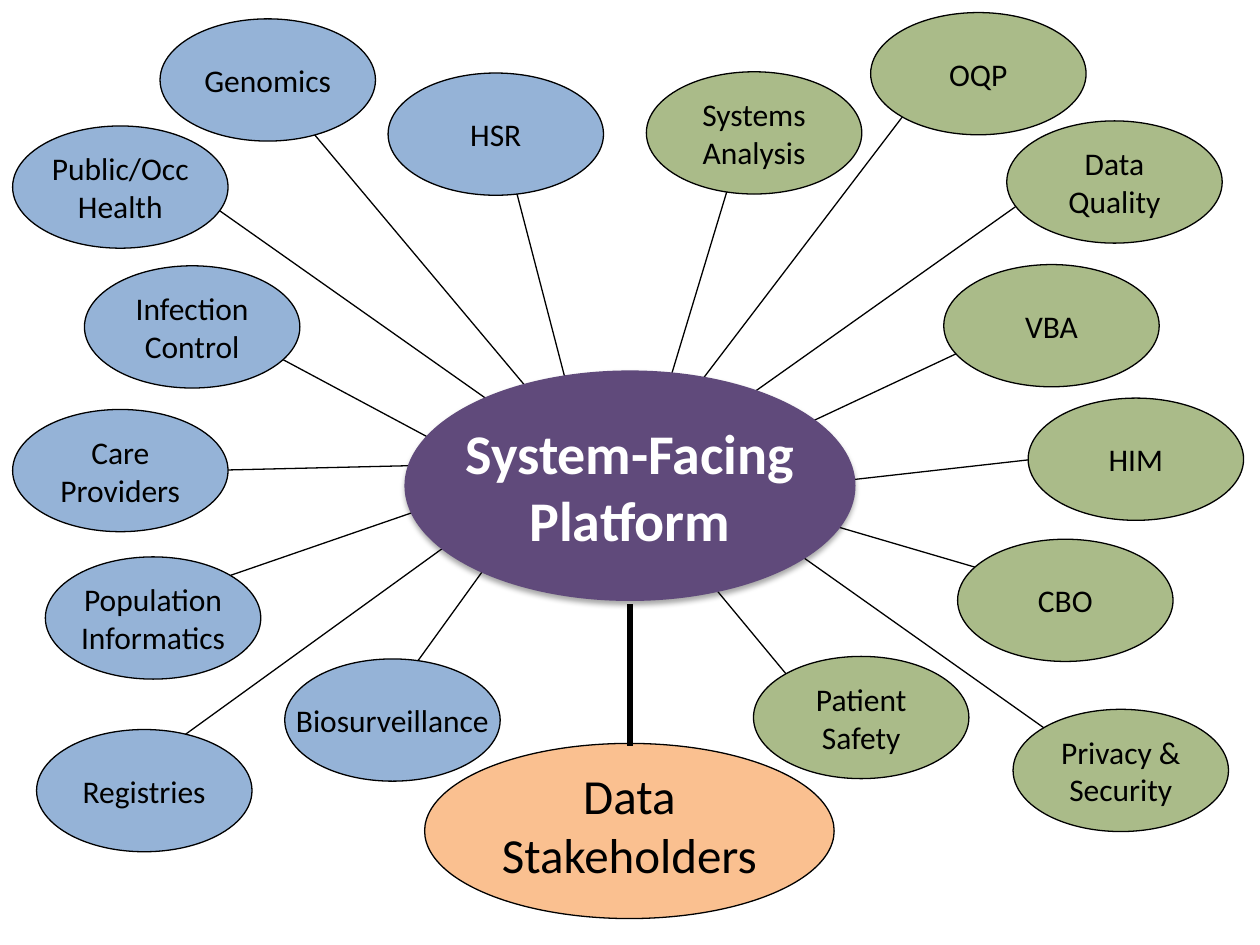
import lxml.etree
import pptx
import pptx.dml.color
import pptx.enum.shapes
import pptx.enum.text
import pptx.oxml.ns
import pptx.util

PX = 9144
BLACK, WHITE = "000000", "FFFFFF"
BLUE, GREEN, ORANGE, PURPLE = "95B3D7", "AABB89", "FAC090", "604A7B"
DEPARTMENT_SIZE = (171, 97)

CLINICAL_BOX = (10, 15)
CLINICAL = [
    ("Biosurveillance", (216, 508), (387, 419), (304, 534)),
    ("Registries", (19, 564), (372, 398), (119, 581)),
    ("Population Informatics", (26, 427), (398, 364), (172, 442)),
    ("Care Providers", (0, 310), (383, 353), (171, 358)),
    ("Infection Control", (57, 196), (412, 376), (197, 261)),
    ("Public/Occ Health", (0, 85), (398, 317), (147, 140)),
    ("Genomics", (117, 0), (415, 301), (228, 78)),
    ("HSR", (298, 43), (441, 295), (398, 130)),
]

BUSINESS_BOX = (513, 10)
BUSINESS = [
    ("Patient Safety", (85, 511), (43, 443), (111, 525)),
    ("Privacy &\vSecurity", (291, 553), (107, 420), (316, 568)),
    ("CBO", (247, 418), (107, 395), (291, 449)),
    ("HIM", (303, 306), (72, 381), (303, 355)),
    ("VBA", (236, 200), (126, 327), (286, 252)),
    ("Data Quality", (286, 86), (66, 315), (341, 120)),
    ("OQP", (178, 0), (21, 322), (203, 83)),
    ("Systems Analysis", (0, 47), (17, 297), (66, 135)),
]

PLATFORM_BOX = (321, 294)


def rgb(value):
    """Turn a hex string into a colour."""
    return pptx.dml.color.RGBColor.from_string(value)


def place(box, point):
    """Return the slide position in EMU of a point inside a box."""
    return [(origin + offset) * PX for origin, offset in zip(box, point)]


def add_spoke(slide, box, start, end, weight=0.75):
    """Draw a black line between two points of a box."""
    spoke = slide.shapes.add_connector(
        pptx.enum.shapes.MSO_CONNECTOR.STRAIGHT, *place(box, start), *place(box, end))
    spoke.line.color.rgb = rgb(BLACK)
    spoke.line.width = pptx.util.Pt(weight)
    lxml.etree.SubElement(spoke._element.spPr, pptx.oxml.ns.qn("a:effectLst"))


def add_bubble(slide, box, corner, size, label, fill, points=18, color=BLACK,
               bold=False, outlined=True, wrap=True, bottom=0):
    """Draw a labelled ellipse inside a box and return it."""
    bubble = slide.shapes.add_shape(
        pptx.enum.shapes.MSO_SHAPE.OVAL, *place(box, corner), *[side * PX for side in size])
    bubble.shadow.inherit = False
    bubble.fill.solid()
    bubble.fill.fore_color.rgb = rgb(fill)
    if outlined:
        bubble.line.color.rgb = rgb(BLACK)
        bubble.line.width = pptx.util.Pt(0.75)
    else:
        bubble.line.fill.background()
    frame = bubble.text_frame
    frame.margin_left = frame.margin_right = frame.margin_top = 0
    frame.margin_bottom = bottom * PX
    frame.word_wrap = wrap
    frame.vertical_anchor = pptx.enum.text.MSO_ANCHOR.MIDDLE
    frame.text = label
    paragraph = frame.paragraphs[0]
    paragraph.alignment = pptx.enum.text.PP_ALIGN.CENTER
    for run in paragraph.runs:
        run.font.name = "Calibri"
        run.font.size = pptx.util.Pt(points)
        run.font.bold = bold
        run.font.color.rgb = rgb(color)
    return bubble


def add_soft_shadow(bubble):
    """Give a bubble a faint shadow straight below it."""
    effects = bubble._element.spPr.find(pptx.oxml.ns.qn("a:effectLst"))
    shadow = lxml.etree.SubElement(
        effects, pptx.oxml.ns.qn("a:outerShdw"), blurRad=str(pptx.util.Pt(3.1)),
        dist=str(pptx.util.Pt(1.8)), dir="5400000", rotWithShape="0")
    tint = lxml.etree.SubElement(shadow, pptx.oxml.ns.qn("a:srgbClr"), val=BLACK)
    lxml.etree.SubElement(tint, pptx.oxml.ns.qn("a:alpha"), val="35000")


def add_departments(slide, box, departments, fill):
    """Draw one side of the map: a spoke and a bubble for each department."""
    for label, corner, start, end in departments:
        add_spoke(slide, box, start, end)
        add_bubble(slide, box, corner, DEPARTMENT_SIZE, label, fill,
                   wrap=label != "Biosurveillance")


def add_platform(slide, box):
    """Draw the central platform linked to its data stakeholders."""
    add_bubble(slide, box, (16, 296), (325, 139), "Data\vStakeholders", ORANGE,
               points=28, wrap=False, bottom=10)
    add_spoke(slide, box, (179, 298), (179, 185), weight=3)
    platform = add_bubble(slide, box, (0, 0), (358, 183), "System-Facing\vPlatform", PURPLE,
                          points=32, color=WHITE, bold=True, outlined=False, wrap=False)
    add_soft_shadow(platform)


def main():
    """Build the stakeholder map and save it."""
    deck = pptx.Presentation()
    deck.slide_width, deck.slide_height = 1000 * PX, 750 * PX
    slide = deck.slides.add_slide(deck.slide_layouts[6])
    add_departments(slide, BUSINESS_BOX, BUSINESS, GREEN)
    add_departments(slide, CLINICAL_BOX, CLINICAL, BLUE)
    add_platform(slide, PLATFORM_BOX)
    deck.save("out.pptx")


if __name__ == "__main__":
    main()
